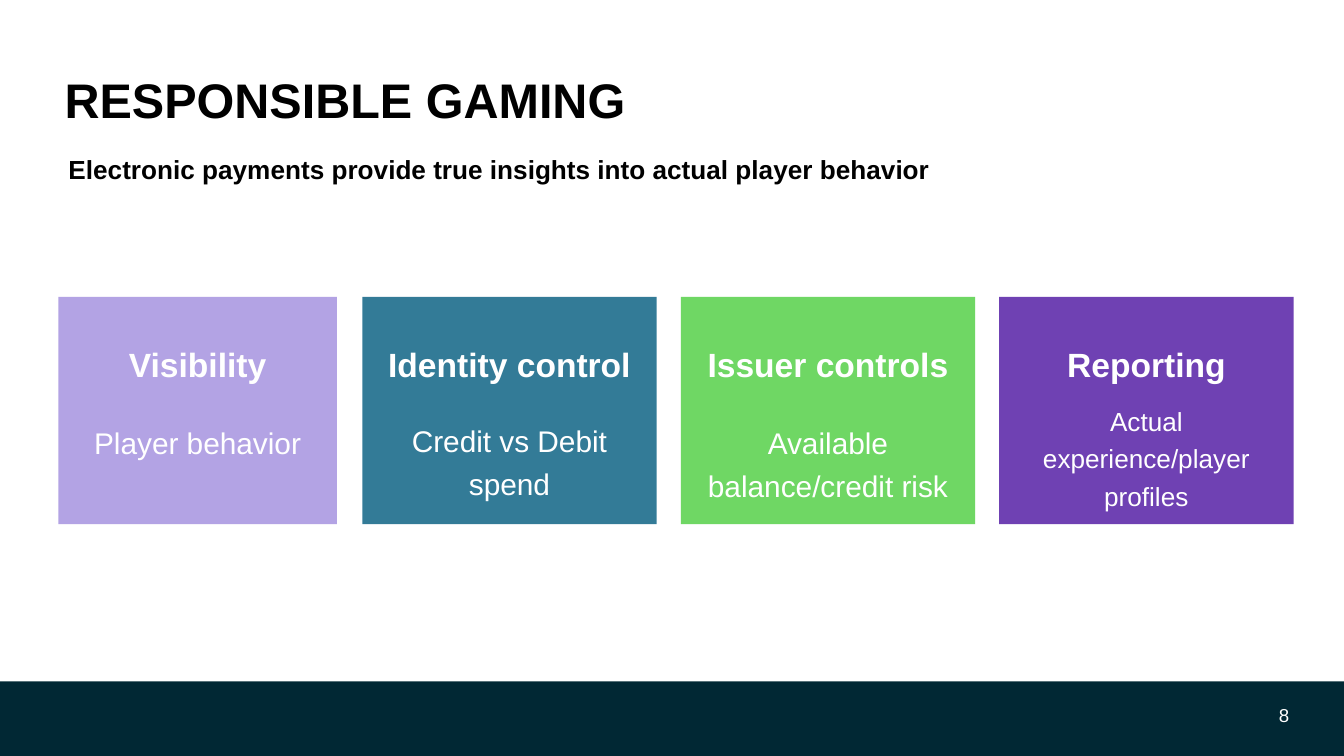
from dataclasses import dataclass

from lxml.etree import SubElement
from pptx import Presentation
from pptx.dml.color import RGBColor
from pptx.enum.shapes import MSO_SHAPE
from pptx.enum.text import MSO_ANCHOR, MSO_AUTO_SIZE, PP_ALIGN
from pptx.oxml.ns import qn
from pptx.util import Pt


@dataclass(frozen=True)
class Theme:
    font: str = "Arial"
    ink: str = "000000"
    paper: str = "FFFFFF"
    footer: str = "012834"
    lilac: str = "A18CDE"
    teal: str = "015B7E"
    green: str = "4BCD3E"
    purple: str = "4C12A1"
    title_size: int = 26
    heading_size: int = 18
    body_size: int = 16
    small_size: int = 14
    number_size: int = 10


THEME = Theme()
PAGE_WIDTH, PAGE_HEIGHT = 720, 405
CARD_TOP, CARD_HEIGHT = 159.1, 121.7
HEADING_TOP, HEADING_HEIGHT = 176.4, 31


def write_text(frame, text, *, size, color, bold=False, align=PP_ALIGN.LEFT,
               spacing=1.0, anchor=MSO_ANCHOR.TOP, wrap=True, insets=(7.2, 3.6)):
    """Put one formatted paragraph into a text frame."""
    frame.auto_size = MSO_AUTO_SIZE.NONE
    frame.word_wrap = wrap
    frame.vertical_anchor = anchor
    frame.margin_left = frame.margin_right = Pt(insets[0])
    frame.margin_top = frame.margin_bottom = Pt(insets[1])
    para = frame.paragraphs[0]
    para.alignment = align
    para.line_spacing = spacing
    para.space_before = Pt(0)
    span = para.add_run()
    span.text = text
    span.font.name = THEME.font
    span.font.size = Pt(size)
    span.font.bold = bold
    span.font.color.rgb = RGBColor.from_string(color)


class PageBuilder:
    def __init__(self, page, theme):
        self.page = page
        self.theme = theme

    def title(self, text, left, top, width, height):
        box = self.page.shapes.title
        box.left, box.top, box.width, box.height = map(Pt, (left, top, width, height))
        write_text(box.text_frame, text, size=self.theme.title_size,
                   color=self.theme.ink, bold=True, anchor=MSO_ANCHOR.MIDDLE,
                   insets=(2.9, 1.4))

    def text(self, text, left, top, width, height, **style):
        box = self.page.shapes.add_textbox(*map(Pt, (left, top, width, height)))
        write_text(box.text_frame, text, **style)

    def block(self, left, top, width, height, color, opacity=100):
        box = self.page.shapes.add_shape(
            MSO_SHAPE.RECTANGLE, *map(Pt, (left, top, width, height)))
        box.shadow.inherit = False
        box.line.fill.background()
        box.fill.solid()
        box.fill.fore_color.rgb = RGBColor.from_string(color)
        if opacity < 100:
            tint = box.fill._xPr.find(qn("a:solidFill"))[0]
            SubElement(tint, qn("a:alpha")).set("val", str(opacity * 1000))

    def card(self, left, width, color, heading, body, body_top, body_height, body_size):
        self.block(left, CARD_TOP, width, CARD_HEIGHT, color, opacity=80)
        style = dict(color=self.theme.paper, align=PP_ALIGN.CENTER, spacing=1.2)
        self.text(heading, left, HEADING_TOP, width, HEADING_HEIGHT,
                  size=self.theme.heading_size, bold=True, wrap=False, **style)
        self.text(body, left, body_top, width, body_height, size=body_size, **style)


def main():
    deck = Presentation()
    deck.slide_width, deck.slide_height = Pt(PAGE_WIDTH), Pt(PAGE_HEIGHT)
    page = deck.slides.add_slide(deck.slide_layouts.get_by_name("Title Only"))
    builder = PageBuilder(page, THEME)

    # Footer band with page number
    builder.block(0, 365, PAGE_WIDTH, 40, THEME.footer)
    builder.text("8", 545.8, 373.7, 151.9, 19.4, size=THEME.number_size,
                 color=THEME.paper, align=PP_ALIGN.RIGHT)

    # Title and subtitle
    builder.title("RESPONSIBLE GAMING", 31.7, 34.6, 595.4, 37.4)
    builder.text("Electronic payments provide true insights into actual player behavior",
                 33.8, 80.6, 511.9, 26.6, size=THEME.small_size, color=THEME.ink,
                 bold=True, insets=(2.9, 1.4))

    # Cards: a narrower first one, then three at an equal pitch
    first_left, first_width = 31.2, 149.3
    next_left, next_width, pitch = 194.1, 157.7, 170.6
    cards = [
        (THEME.lilac, "Visibility", "Player behavior", 220.3, 30, THEME.body_size),
        (THEME.teal, "Identity control", "Credit vs Debit spend", 218.9, 52, THEME.body_size),
        (THEME.green, "Issuer controls", "Available balance/credit risk", 220.3, 52,
         THEME.body_size),
        (THEME.purple, "Reporting", "Actual experience/player profiles", 210.2, 68,
         THEME.small_size),
    ]
    builder.card(first_left, first_width, *cards[0])
    for index, card in enumerate(cards[1:]):
        builder.card(next_left + index * pitch, next_width, *card)

    deck.save("out.pptx")


if __name__ == "__main__":
    main()
